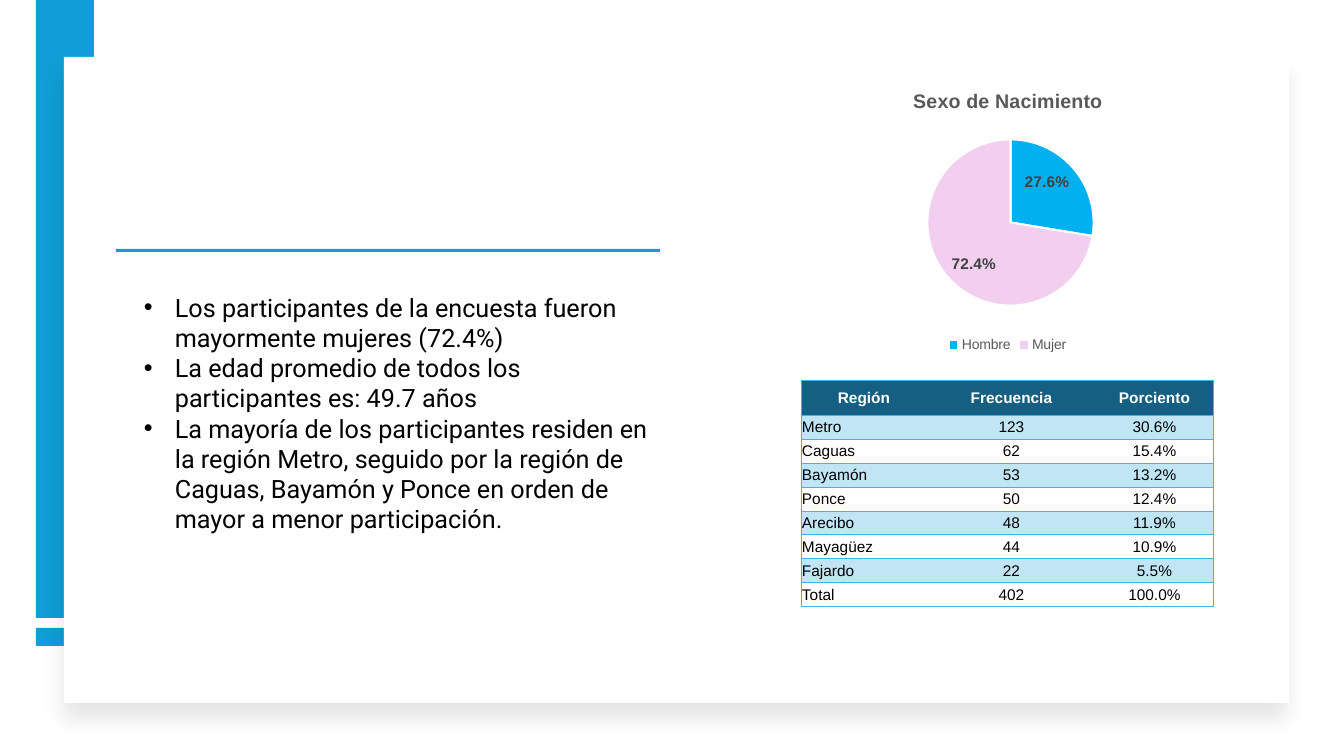
from dataclasses import dataclass

from lxml import etree
from pptx import Presentation
from pptx.chart.data import CategoryChartData
from pptx.dml.color import RGBColor
from pptx.enum.chart import XL_CHART_TYPE as ChartType
from pptx.enum.chart import XL_LABEL_POSITION as LabelPosition
from pptx.enum.chart import XL_LEGEND_POSITION as LegendPosition
from pptx.enum.shapes import MSO_SHAPE as Shape
from pptx.enum.text import MSO_ANCHOR as Anchor
from pptx.enum.text import PP_ALIGN as Align
from pptx.oxml import parse_xml
from pptx.oxml.ns import nsdecls, qn
from pptx.util import Pt

SLIDE_WIDTH, SLIDE_HEIGHT = 1344, 756
EMU_PER_PX = 12192000 / SLIDE_WIDTH


@dataclass(frozen=True)
class Theme:
    accent: str = "0F9ED5"
    white: str = "FFFFFF"
    black: str = "000000"
    gray: str = "595959"
    label: str = "404040"
    header: str = "156082"
    band: str = "C0E6F5"
    border: str = "44B3E1"
    men: str = "00B0F0"
    women: str = "F2CFEE"
    body_font: str = "Roboto"
    data_font: str = "Arial"
    body_size: int = 18
    title_size: int = 14
    table_size: int = 11
    legend_size: int = 10


THEME = Theme()

FINDINGS = [
    "Los participantes de la encuesta fueron mayormente mujeres (72.4%)",
    "La edad promedio de todos los participantes es: 49.7 años",
    "La mayoría de los participantes residen en la región Metro, seguido por la región "
    "de Caguas, Bayamón y Ponce en orden de mayor a menor participación.",
]
REGIONS = [
    ("Región", "Frecuencia", "Porciento"),
    ("Metro", "123", "30.6%"),
    ("Caguas", "62", "15.4%"),
    ("Bayamón", "53", "13.2%"),
    ("Ponce", "50", "12.4%"),
    ("Arecibo", "48", "11.9%"),
    ("Mayagüez", "44", "10.9%"),
    ("Fajardo", "22", "5.5%"),
    ("Total", "402", "100.0%"),
]
SEXES = [("Hombre", 0.276, THEME.men), ("Mujer", 0.724, THEME.women)]


def px(length):
    return round(length * EMU_PER_PX)


def box(*lengths):
    return [px(length) for length in lengths]


def rgb(color):
    return RGBColor.from_string(color)


def format_font(font, size, color, name=THEME.data_font, bold=False):
    font.name, font.size, font.bold = name, Pt(size), bold
    font.color.rgb = rgb(color)


def write_text(paragraph, text, align=Align.LEFT, bullet=None, indent=0, **font_format):
    paragraph.alignment = align
    if bullet:
        properties = paragraph._p.get_or_add_pPr()
        properties.set("marL", str(px(indent)))
        properties.set("indent", str(-px(indent)))
        etree.SubElement(properties, qn("a:buFont"), typeface="Arial")
        etree.SubElement(properties, qn("a:buChar"), char=bullet)
    run = paragraph.add_run()
    run.text = text
    format_font(run.font, **font_format)


def add_block(slide, bounds, color, shadow=False):
    shape = slide.shapes.add_shape(Shape.RECTANGLE, *box(*bounds))
    shape.fill.solid()
    shape.fill.fore_color.rgb = rgb(color)
    shape.line.fill.background()
    shape.shadow.inherit = False
    if shadow:
        shape._element.spPr.find(qn("a:effectLst")).append(parse_xml(
            f'<a:outerShdw {nsdecls("a")} blurRad="{Pt(15)}" dist="{Pt(11)}" dir="5400000" '
            f'algn="t" rotWithShape="0"><a:srgbClr val="{THEME.black}">'
            '<a:alpha val="10000"/></a:srgbClr></a:outerShdw>'))


def add_bullets(slide, bounds, items):
    frame = slide.shapes.add_textbox(*box(*bounds)).text_frame
    frame.word_wrap = True
    for index, item in enumerate(items):
        paragraph = frame.add_paragraph() if index else frame.paragraphs[0]
        write_text(paragraph, item, bullet="•", indent=31, name=THEME.body_font,
                   size=THEME.body_size, color=THEME.black)


def place_plot(chart, **fractions):
    """Fix the inner plot area as fractions of the chart."""
    plot_area = chart._chartSpace.chart.plotArea
    for layout in plot_area.findall(qn("c:layout")):
        plot_area.remove(layout)
    edges = "".join(f'<c:{key} val="{value}"/>' for key, value in fractions.items())
    plot_area.insert(0, parse_xml(
        f'<c:layout {nsdecls("c")}><c:manualLayout><c:layoutTarget val="inner"/>'
        f'<c:xMode val="edge"/><c:yMode val="edge"/>{edges}</c:manualLayout></c:layout>'))


def add_pie(slide, bounds, title, sectors):
    data = CategoryChartData(number_format="0.0%")
    data.categories = [name for name, _, _ in sectors]
    data.add_series("Series 1", [value for _, value, _ in sectors])
    chart = slide.shapes.add_chart(ChartType.PIE, *box(*bounds), data).chart
    format_font(chart.font, THEME.legend_size, THEME.black)
    chart.has_title = True
    write_text(chart.chart_title.text_frame.paragraphs[0], title, align=Align.CENTER,
               size=THEME.title_size, color=THEME.gray, bold=True)
    chart.has_legend = True
    chart.legend.position = LegendPosition.BOTTOM
    chart.legend.include_in_layout = False
    format_font(chart.legend.font, THEME.legend_size, THEME.gray)

    plot = chart.plots[0]
    plot.vary_by_categories = True
    for index, (_, _, color) in enumerate(sectors):
        sector = plot.series[0].points[index].format
        sector.fill.solid()
        sector.fill.fore_color.rgb = rgb(color)
        sector.line.color.rgb = rgb(THEME.white)
        sector.line.width = Pt(1.5)
    plot.has_data_labels = True
    labels = plot.data_labels
    labels.show_value, labels.show_percentage = True, False
    labels.number_format, labels.number_format_is_linked = "0.0%", False
    labels.position = LabelPosition.INSIDE_END
    format_font(labels.font, THEME.table_size, THEME.label, bold=True)
    place_plot(chart, x=0.34, y=0.23, w=0.33, h=0.59)


def set_borders(cell, visible_sides):
    properties = cell._tc.get_or_add_tcPr()
    for side in "LRTB":
        line = etree.SubElement(properties, qn(f"a:ln{side}"), w=str(Pt(0.5)))
        if side in visible_sides:
            fill = etree.SubElement(line, qn("a:solidFill"))
            etree.SubElement(fill, qn("a:srgbClr"), val=THEME.border)
        else:
            etree.SubElement(line, qn("a:noFill"))


def add_table(slide, left, top, widths, heights, rows):
    table = slide.shapes.add_table(len(rows), len(widths), *box(
        left, top, sum(widths), sum(heights))).table
    table.horz_banding = False
    for column, width in zip(table.columns, widths):
        column.width = px(width)
    outer_sides = {0: "L", len(widths) - 1: "R"}
    for row_index, values in enumerate(rows):
        table.rows[row_index].height = px(heights[row_index])
        is_header = row_index == 0
        for column_index, value in enumerate(values):
            cell = table.cell(row_index, column_index)
            cell.vertical_anchor = Anchor.MIDDLE
            cell.margin_left = cell.margin_right = cell.margin_top = px(1)
            cell.margin_bottom = 0
            set_borders(cell, "TB" + outer_sides.get(column_index, ""))
            if row_index % 2 or is_header:
                cell.fill.solid()
                cell.fill.fore_color.rgb = rgb(THEME.header if is_header else THEME.band)
            else:
                cell.fill.background()
            write_text(cell.text_frame.paragraphs[0], value, size=THEME.table_size,
                       align=Align.CENTER if is_header or column_index else Align.LEFT,
                       color=THEME.white if is_header else THEME.black, bold=is_header)


def main():
    presentation = Presentation()
    presentation.slide_width, presentation.slide_height = box(SLIDE_WIDTH, SLIDE_HEIGHT)
    slide = presentation.slides.add_slide(presentation.slide_layouts[6])

    # Side bars, card and rule
    add_block(slide, (36, 628, 58, 18), THEME.accent)
    add_block(slide, (36, 0, 58, 618), THEME.accent)
    add_block(slide, (64, 57, 1225, 646), THEME.white, shadow=True)
    add_block(slide, (116, 249, 544, 3), THEME.accent)

    # Findings, chart and table
    add_bullets(slide, (134, 287, 542, 285), FINDINGS)
    add_pie(slide, (756, 74, 504, 283), "Sexo de Nacimiento", SEXES)
    add_table(slide, 801, 380, [126, 169, 117], [35] + [24] * 8, REGIONS)

    presentation.save("out.pptx")


if __name__ == "__main__":
    main()
